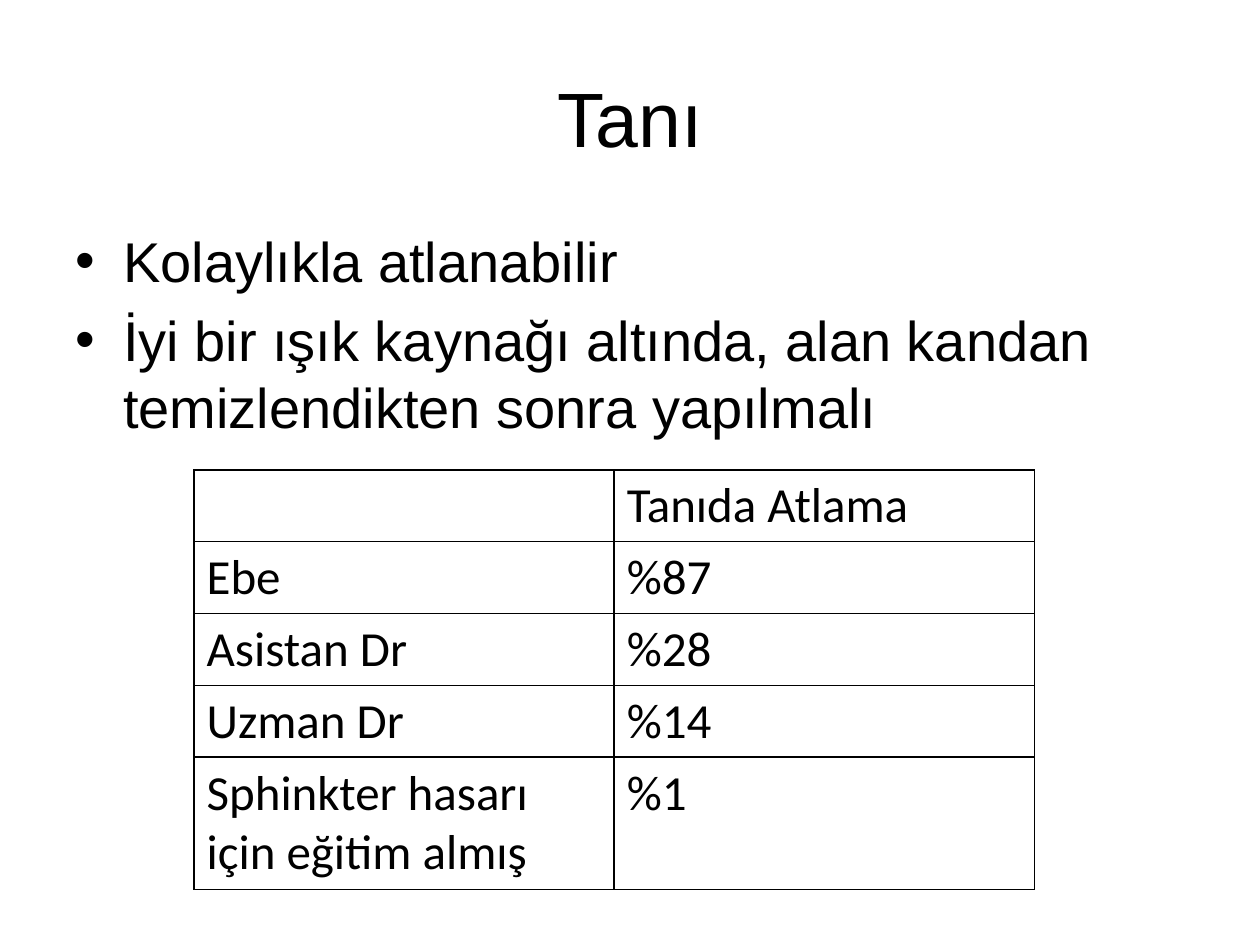
from dataclasses import dataclass

from pptx import Presentation as Deck
from pptx.dml.color import RGBColor as Rgb
from pptx.enum.text import MSO_ANCHOR as Anchor, PP_ALIGN as Align
from pptx.oxml import parse_xml as to_xml
from pptx.oxml.ns import nsdecls
from pptx.util import Inches, Pt


@dataclass(frozen=True)
class Theme:
    """Colours, fonts and type sizes."""
    ink: str = "000000"
    paper: str = "FFFFFF"
    head: tuple = ("Arial", 44)
    body: tuple = ("Arial", 32)
    cell: tuple = ("Calibri", 28)
    line: float = 1


THEME = Theme()
TITLE = "Tanı"
POINTS = [
    "Kolaylıkla atlanabilir",
    "İyi bir ışık kaynağı altında, alan kandan temizlendikten sonra yapılmalı",
]
ROWS = [
    ("", "Tanıda Atlama"),
    ("Ebe", "%87"),
    ("Asistan Dr", "%28"),
    ("Uzman Dr", "%14"),
    ("Sphinkter hasarı için eğitim almış", "%1"),
]
HEIGHTS = [0.57] * 4 + [1.05]


def apply(item, values):
    """Set each named value on the item."""
    for name, value in values.items():
        setattr(item, name, value)


def style(para, face):
    """Give a paragraph its font, size and colour."""
    name, size = face
    apply(para.font, {"name": name, "size": Pt(size)})
    para.font.color.rgb = Rgb.from_string(THEME.ink)


def add_text(slide, area, lines, face, anchor=Anchor.TOP):
    """Add a text box and return its paragraphs."""
    frame = slide.shapes.add_textbox(*map(Inches, area)).text_frame
    apply(frame, {"word_wrap": True, "vertical_anchor": anchor,
                  "text": "\n".join(lines)})
    for para in frame.paragraphs:
        style(para, face)
    return frame.paragraphs


def add_bullet(para):
    """Turn a paragraph into a bullet with a hanging indent."""
    para.space_before = Pt(0.2 * THEME.body[1])
    props = para._p.get_or_add_pPr()
    indent = Inches(0.38)
    props.set("marL", str(indent))
    props.set("indent", str(-indent))
    for tag in ('buFont {} typeface="Arial"', 'buChar {} char="•"'):
        node = to_xml(f"<a:{tag.format(nsdecls('a'))}/>")
        props.insert_element_before(node, "a:tabLst", "a:defRPr", "a:extLst")


def add_edges(cell):
    """Draw the four borders of a cell."""
    props = cell._tc.get_or_add_tcPr()
    for spot, side in enumerate("LRTB"):
        props.insert(spot, to_xml(
            f'<a:ln{side} {nsdecls("a")} w="{Pt(THEME.line)}"><a:solidFill>'
            f'<a:srgbClr val="{THEME.ink}"/></a:solidFill></a:ln{side}>'))


def add_grid(slide, area, rows, heights):
    """Add a ruled table without banding."""
    shape = slide.shapes.add_table(len(rows), len(rows[0]), *map(Inches, area))
    table = shape.table
    apply(table, {"first_row": False, "horz_banding": False})
    for row, height, words in zip(table.rows, heights, rows):
        row.height = Inches(height)
        for cell, text in zip(row.cells, words):
            cell.text = text
            style(cell.text_frame.paragraphs[0], THEME.cell)
            cell.fill.background()
            add_edges(cell)


def main():
    """Build and save the slide."""
    deck = Deck()
    apply(deck, {"slide_width": Inches(10), "slide_height": Inches(7.5)})
    slide = deck.slides.add_slide(deck.slide_layouts[6])
    fill = slide.background.fill
    fill.solid()
    fill.fore_color.rgb = Rgb.from_string(THEME.paper)
    title = add_text(slide, (0.5, 0.3, 9, 1.25), [TITLE], THEME.head,
                     Anchor.MIDDLE)
    title[0].alignment = Align.CENTER
    for para in add_text(slide, (0.5, 1.75, 9, 4.95), POINTS, THEME.body):
        add_bullet(para)
    add_grid(slide, (1.54, 3.73, 6.67, sum(HEIGHTS)), ROWS, HEIGHTS)
    deck.save("out.pptx")


if __name__ == "__main__":
    main()
